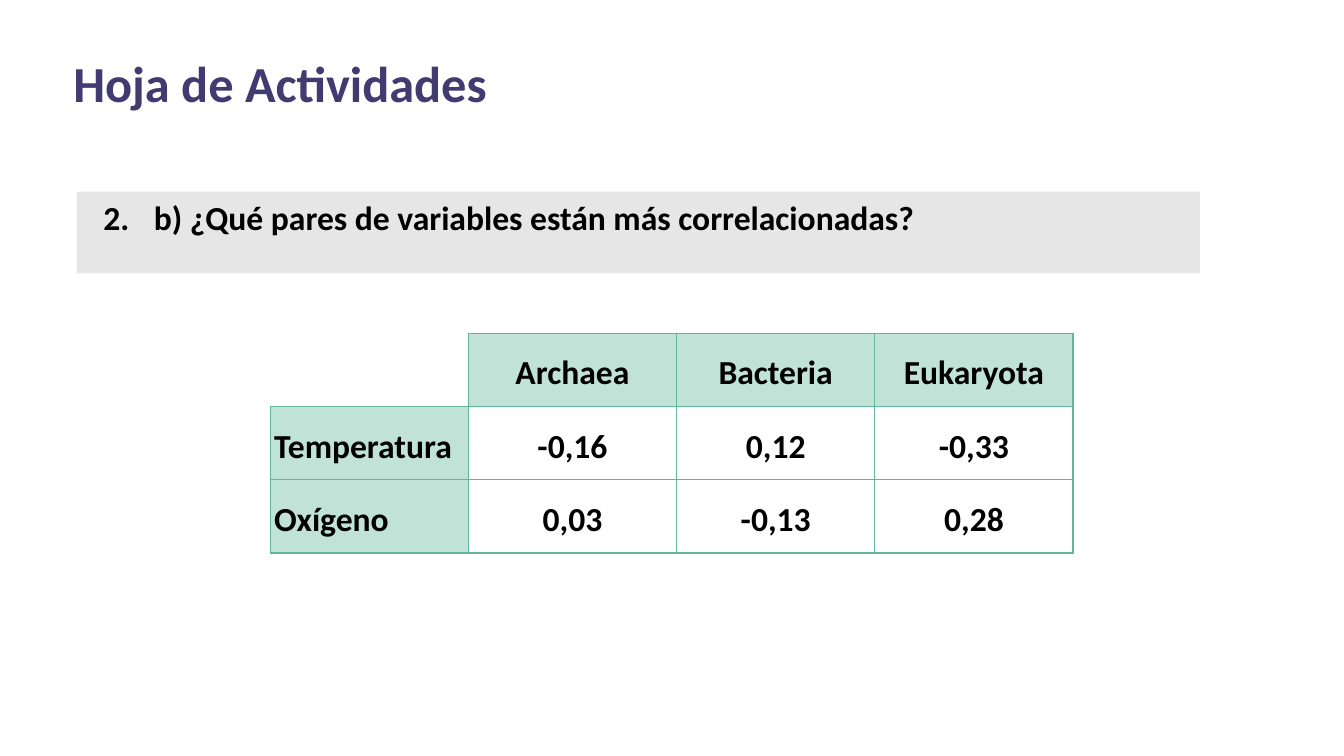
import dataclasses
import typing

import lxml.etree
import pptx
import pptx.dml.color
import pptx.enum.shapes
import pptx.enum.text
import pptx.oxml.ns
import pptx.util

EMU_PER_PX = 4572  # 200 px to the inch
FONT = "Calibri"
BLACK, WHITE, PURPLE = "000000", "FFFFFF", "423B71"
GREY, MINT, GREEN = "E7E6E6", "C0E2D7", "62B799"
ALIGN = pptx.enum.text.PP_ALIGN
ANCHOR = pptx.enum.text.MSO_ANCHOR


@dataclasses.dataclass(frozen=True)
class Area:
    left: int
    top: int
    width: int
    height: int

    def emu(self) -> typing.List[int]:
        return [px(value) for value in dataclasses.astuple(self)]


@dataclasses.dataclass(frozen=True)
class CorrelationRow:
    variable: str
    values: typing.Tuple[str, ...]


TITLE_AREA = Area(94, 70, 1574, 106)
QUESTION_AREA = Area(114, 285, 1672, 122)
TABLE_AREA = Area(402, 496, 1195, 327)
COLUMN_WIDTHS = (295, 310, 295, 295)
DOMAINS = ("Archaea", "Bacteria", "Eukaryota")
ROWS = (
    CorrelationRow("Temperatura", ("-0,16", "0,12", "-0,33")),
    CorrelationRow("Oxígeno", ("0,03", "-0,13", "0,28")),
)


def px(value: int) -> int:
    return pptx.util.Emu(value * EMU_PER_PX)


def color(value: str) -> pptx.dml.color.RGBColor:
    return pptx.dml.color.RGBColor.from_string(value)


def add_child(parent, tag: str, **attributes: str):
    child = lxml.etree.SubElement(parent, pptx.oxml.ns.qn(tag))
    for name, value in attributes.items():
        child.set(name, value)
    return child


def number_paragraph(para, start: int, margin: int, indent: int) -> None:
    properties = para._p.get_or_add_pPr()
    properties.set("marL", str(px(margin)))
    properties.set("indent", str(px(indent)))
    bullet_color = add_child(properties, "a:buClr")
    add_child(bullet_color, "a:srgbClr", val=BLACK)
    add_child(properties, "a:buAutoNum", type="arabicPeriod", startAt=str(start))


def write(holder, text: str, *, size: int = 18, ink: str = BLACK,
          align=ALIGN.LEFT, spacing: float = 1.0, after: int = 0,
          number: typing.Optional[int] = None) -> None:
    """Put one bold paragraph into a shape or a table cell."""
    para = holder.text_frame.paragraphs[0]
    para.alignment = align
    para.line_spacing = spacing
    para.space_after = pptx.util.Pt(after)
    if number is not None:
        number_paragraph(para, number, margin=100, indent=-75)
    span = para.add_run()
    span.text = text
    span.font.name = FONT
    span.font.size = pptx.util.Pt(size)
    span.font.bold = True
    span.font.color.rgb = color(ink)


def set_frame(box) -> None:
    frame = box.text_frame
    frame.word_wrap = True
    frame.auto_size = pptx.enum.text.MSO_AUTO_SIZE.NONE
    frame.vertical_anchor = ANCHOR.TOP
    frame.margin_left = frame.margin_right = px(15)
    frame.margin_top = frame.margin_bottom = px(8)


def add_title(page, text: str) -> None:
    title = page.shapes.title
    title.left, title.top, title.width, title.height = TITLE_AREA.emu()
    set_frame(title)
    write(title, text, size=27, ink=PURPLE)


def add_question(page, text: str, number: int) -> None:
    box = page.shapes.add_shape(
        pptx.enum.shapes.MSO_SHAPE.RECTANGLE, *QUESTION_AREA.emu())
    box.shadow.inherit = False
    box.fill.solid()
    box.fill.fore_color.rgb = color(GREY)
    box.line.fill.background()
    set_frame(box)
    write(box, text, align=ALIGN.JUSTIFY, after=10, number=number)


def format_cell(cell, fill: typing.Optional[str], outer: str = GREEN) -> None:
    """Set borders, fill and margins; outer colours the left and top edges."""
    properties = cell._tc.get_or_add_tcPr()
    edges = {"a:lnL": outer, "a:lnR": GREEN, "a:lnT": outer, "a:lnB": GREEN}
    for tag, edge_color in edges.items():
        line = add_child(properties, tag, w=str(pptx.util.Pt(0.75)))
        add_child(add_child(line, "a:solidFill"), "a:srgbClr", val=edge_color)
    if fill:
        cell.fill.solid()
        cell.fill.fore_color.rgb = color(fill)
    else:
        cell.fill.background()
    cell.vertical_anchor = ANCHOR.BOTTOM
    cell.margin_left = cell.margin_right = px(6)
    cell.margin_top = cell.margin_bottom = px(19)


def add_correlations(page) -> None:
    grid = [("", *DOMAINS)] + [(row.variable, *row.values) for row in ROWS]
    table = page.shapes.add_table(
        len(grid), len(COLUMN_WIDTHS), *TABLE_AREA.emu()).table
    table.first_row = table.horz_banding = False
    for column, width in zip(table.columns, COLUMN_WIDTHS):
        column.width = px(width)

    for row_index, texts in enumerate(grid):
        for column_index, text in enumerate(texts):
            cell = table.cell(row_index, column_index)
            if not text:  # blank corner
                format_cell(cell, None, outer=WHITE)
                continue
            is_header = row_index == 0 or column_index == 0
            format_cell(cell, MINT if is_header else None)
            align = ALIGN.CENTER if column_index else ALIGN.LEFT
            write(cell, text, align=align, spacing=1.15)


def main() -> None:
    deck = pptx.Presentation()
    deck.slide_width, deck.slide_height = px(2000), px(1125)
    page = deck.slides.add_slide(deck.slide_layouts.get_by_name("Title Only"))

    # Heading and question
    add_title(page, "Hoja de Actividades")
    add_question(page, "b) ¿Qué pares de variables están más correlacionadas?", 2)

    # Correlation table
    add_correlations(page)
    deck.save("out.pptx")


if __name__ == "__main__":
    main()
